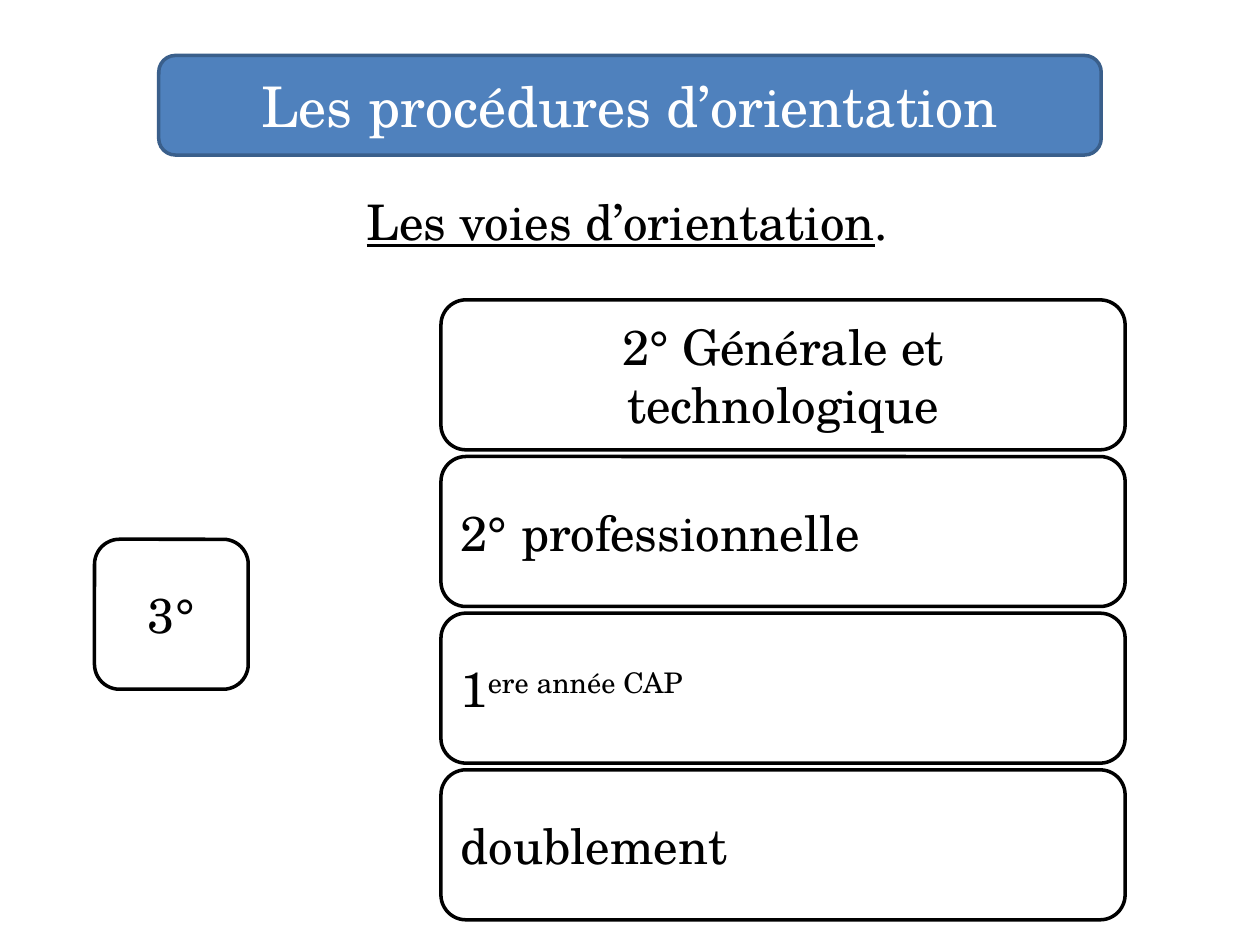
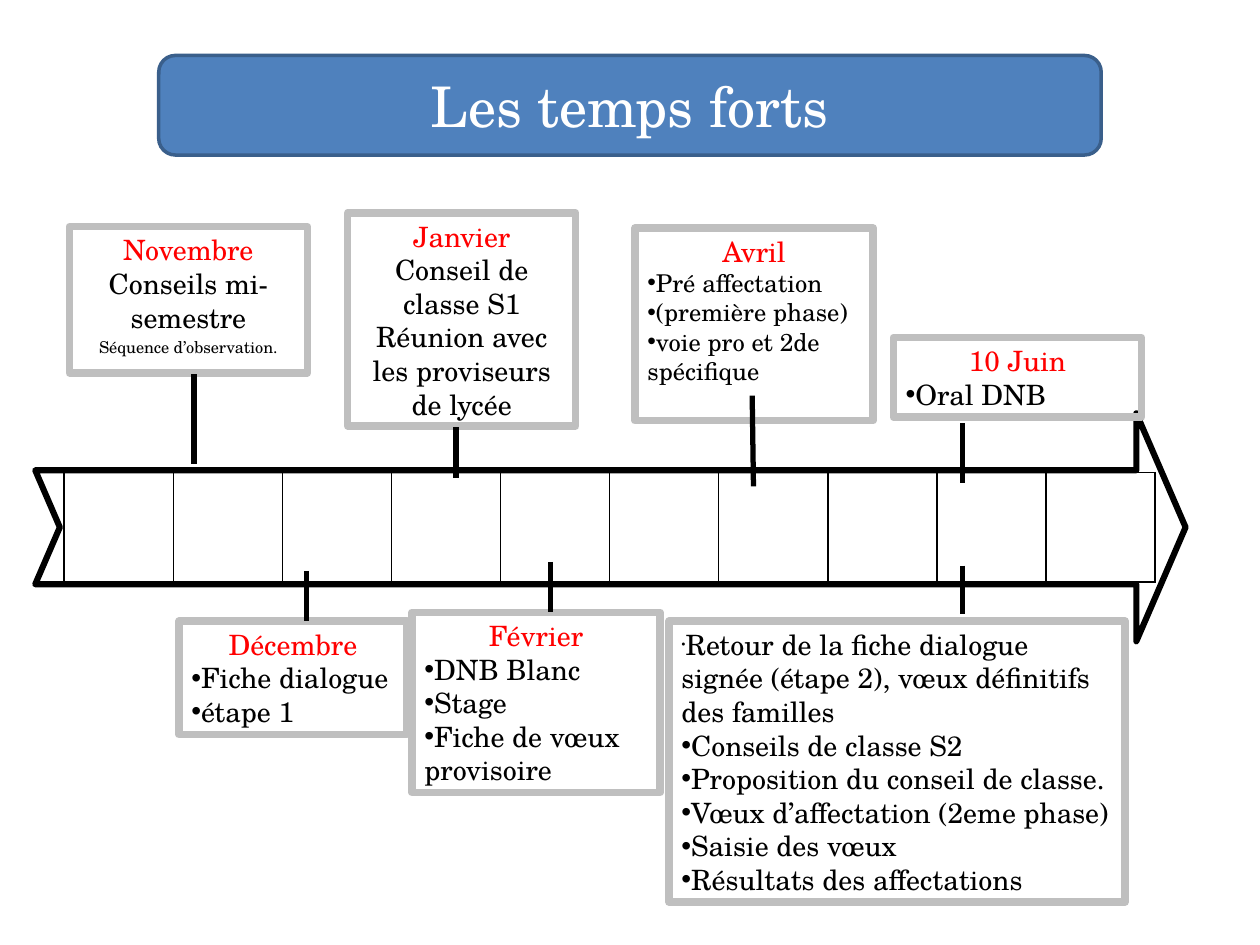
from lxml import etree
from pptx import Presentation, util as u
from pptx.dml.color import RGBColor
from pptx.enum import shapes, text
from pptx.oxml.ns import qn

FONT = "TeX Gyre Schola"
COLORS = {"band": "4F81BD", "band_edge": "3A5F8B", "white": "FFFFFF",
          "black": "000000", "frame": "BFBFBF", "month": "FF0000"}
CENTER, LEFT = text.PP_ALIGN.CENTER, text.PP_ALIGN.LEFT
ROUNDED = shapes.MSO_SHAPE.ROUNDED_RECTANGLE
RECT = shapes.MSO_SHAPE.RECTANGLE


def rgb(name):
    return RGBColor.from_string(COLORS[name])


def inches(*lengths):
    return [u.Inches(n) for n in lengths]


def add_box(s, kind, box, line, width, fill=None):
    sp = s.shapes.add_shape(kind, *inches(*box))
    sp.shadow.inherit = False
    if fill:
        sp.fill.solid()
        sp.fill.fore_color.rgb = rgb(fill)
    else:
        sp.fill.background()
    sp.line.color.rgb = rgb(line)
    sp.line.width = u.Pt(width)
    sp.text_frame.word_wrap = True
    return sp


def style_run(r, size, color="black", raised=False):
    r.font.name = FONT
    r.font.size = u.Pt(size)
    r.font.color.rgb = rgb(color)
    if raised:
        r.font._element.set("baseline", "30000")


def write(p, words, size, color="black", align=CENTER, raised=False):
    p.text = words
    p.alignment = align
    style_run(p.runs[0], size, color, raised)


def add_bullet(p, char="•", percent=100):
    pPr = p._p.get_or_add_pPr()
    etree.SubElement(pPr, qn("a:buSzPct")).set("val", str(percent * 1000))
    etree.SubElement(pPr, qn("a:buFont")).set("typeface", "Arial")
    etree.SubElement(pPr, qn("a:buChar")).set("char", char)


def add_title(s, words):
    sp = add_box(s, ROUNDED, (1.26, 0.44, 7.48, 0.79), "band_edge", 2, "band")
    write(sp.text_frame.paragraphs[0], words, 32, "white")


def add_subtitle(s, words, ending):
    """Underline the words but not their closing punctuation."""
    tf = s.shapes.add_textbox(*inches(1.71, 1.47, 6.54, 0.57)).text_frame
    tf.word_wrap = True
    p = tf.paragraphs[0]
    write(p, words, 28)
    p.runs[0].font.underline = True
    r = p.add_run()
    r.text = ending
    style_run(r, 28)


def add_pathway(s, box, words, align=LEFT, superscript=None):
    sp = add_box(s, ROUNDED, box, "black", 2, "white")
    p = sp.text_frame.paragraphs[0]
    write(p, words, 28, align=align)
    if superscript:
        r = p.add_run()
        r.text = superscript
        style_run(r, 28, raised=True)


def add_event(s, box, month=None, lines=(), bullets=(), size=16):
    """Framed note: red month, then centred lines, then bulleted items."""
    tf = add_box(s, RECT, box, "frame", 4.25).text_frame
    tf.vertical_anchor = text.MSO_ANCHOR.TOP
    entries = [(month, "month")] if month else []
    entries += [(line, "line") for line in lines]
    entries += [(item, "bullet") for item in bullets]
    for i, (words, role) in enumerate(entries):
        p = tf.add_paragraph() if i else tf.paragraphs[0]
        if role == "month":
            write(p, words, 16, "month")
        elif role == "line":
            write(p, words, size)
        else:
            write(p, words, size, align=LEFT)
            add_bullet(p)
    return tf


def add_tick(s, x1, y1, x2, y2):
    c = s.shapes.add_connector(shapes.MSO_CONNECTOR.STRAIGHT,
                               *inches(x1, y1, x2, y2))
    c.line.color.rgb = rgb("black")
    c.line.width = u.Pt(3)
    etree.SubElement(c._element.spPr, qn("a:effectLst"))


def set_borders(cell, width):
    tcPr = cell._tc.get_or_add_tcPr()
    for i, side in enumerate(("a:lnL", "a:lnR", "a:lnT", "a:lnB")):
        ln = etree.Element(qn(side), w=str(u.Pt(width)))
        fill = etree.SubElement(ln, qn("a:solidFill"))
        etree.SubElement(fill, qn("a:srgbClr")).set("val", COLORS["black"])
        tcPr.insert(i, ln)


def add_month_grid(s, months=10):
    box = inches(0.51, 3.75, 8.66, 0.87)
    table = s.shapes.add_table(1, months, *box).table
    table.first_row = table.horz_banding = False
    for cell in table.iter_cells():
        cell.fill.background()
        set_borders(cell, 1)


def build_pathways(s):
    add_title(s, "Les procédures d’orientation")
    add_subtitle(s, "Les voies d’orientation", ".")
    add_pathway(s, (0.75, 4.28, 1.22, 1.19), "3°", CENTER)
    pathways = [("2° Générale et technologique", CENTER),
                ("2° professionnelle", LEFT),
                ("1", LEFT, "ere année CAP"),
                ("doublement", LEFT)]
    first, last = 2.38, 6.11
    pitch = (last - first) / (len(pathways) - 1)
    for i, pathway in enumerate(pathways):
        add_pathway(s, (3.5, first + i * pitch, 5.43, 1.19), *pathway)


def build_timeline(s):
    add_title(s, "Les temps forts")
    arrow = add_box(s, shapes.MSO_SHAPE.NOTCHED_RIGHT_ARROW,
                    (0.28, 3.28, 9.13, 1.81), "black", 3.5)
    arrow.adjustments[0], arrow.adjustments[1] = 0.5, 0.216
    add_month_grid(s)

    november = add_event(s, (0.55, 1.8, 1.89, 1.16), "Novembre",
                         ["Conseils mi- semestre", "Séquence d’observation."])
    style_run(november.paragraphs[-1].runs[0], 16, raised=True)
    add_event(s, (1.42, 4.93, 1.81, 0.9), "Décembre",
              bullets=["Fiche dialogue", "étape 1"])
    add_event(s, (2.76, 1.69, 1.81, 1.69), "Janvier",
              ["Conseil de classe S1", "Réunion avec les proviseurs de lycée"])
    add_event(s, (3.27, 4.86, 1.97, 1.43), "Février",
              bullets=["DNB Blanc", "Stage", "Fiche de vœux provisoire"])
    add_event(s, (5.04, 1.81, 1.89, 1.53), "Avril", size=14,
              bullets=["Pré affectation", "(première phase)",
                       "voie pro et 2de spécifique"])
    add_event(s, (7.09, 2.68, 1.97, 0.63), "10 Juin", bullets=["Oral DNB"])
    june = add_event(s, (5.31, 4.93, 3.62, 2.23), bullets=[
        "Conseils de classe S2", "Proposition du conseil de classe.",
        "Vœux d’affectation (2eme phase)", "Saisie des vœux",
        "Résultats des affectations"],
        lines=["Retour de la fiche dialogue signée (étape 2), "
               "vœux définitifs des familles"])
    june.paragraphs[0].alignment = LEFT
    add_bullet(june.paragraphs[0], "●", 25)

    for tick in [(1.54, 2.97, 1.54, 3.68), (2.43, 4.53, 2.43, 4.93),
                 (3.62, 3.39, 3.62, 3.79), (4.37, 4.46, 4.37, 4.86),
                 (5.97, 3.14, 5.98, 3.86), (7.64, 3.36, 7.64, 3.83),
                 (7.64, 4.49, 7.64, 4.87)]:
        add_tick(s, *tick)


def main():
    prs = Presentation()
    prs.slide_width, prs.slide_height = inches(10, 7.5)
    for build in (build_pathways, build_timeline):
        build(prs.slides.add_slide(prs.slide_layouts[6]))
    prs.save("out.pptx")


if __name__ == "__main__":
    main()
